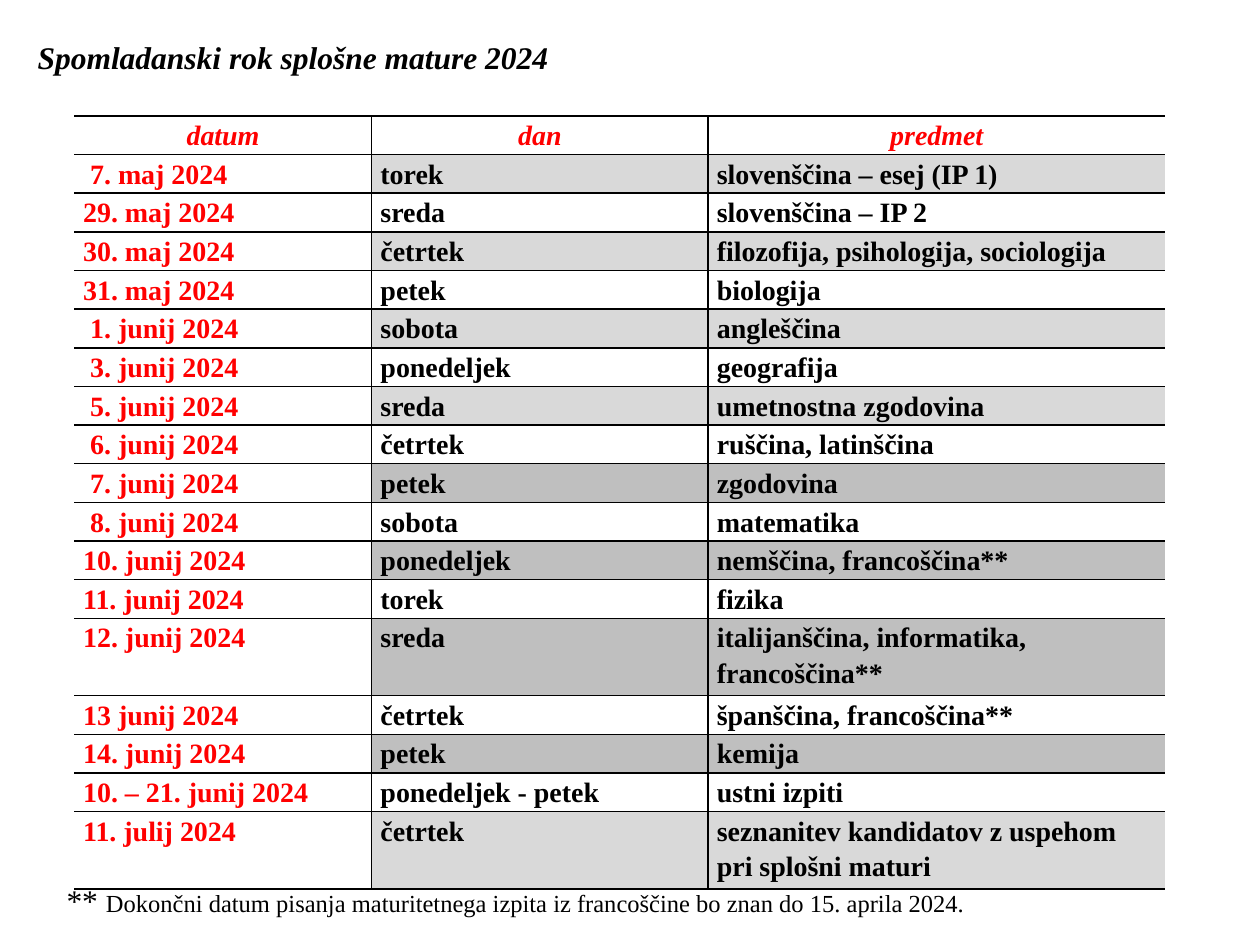
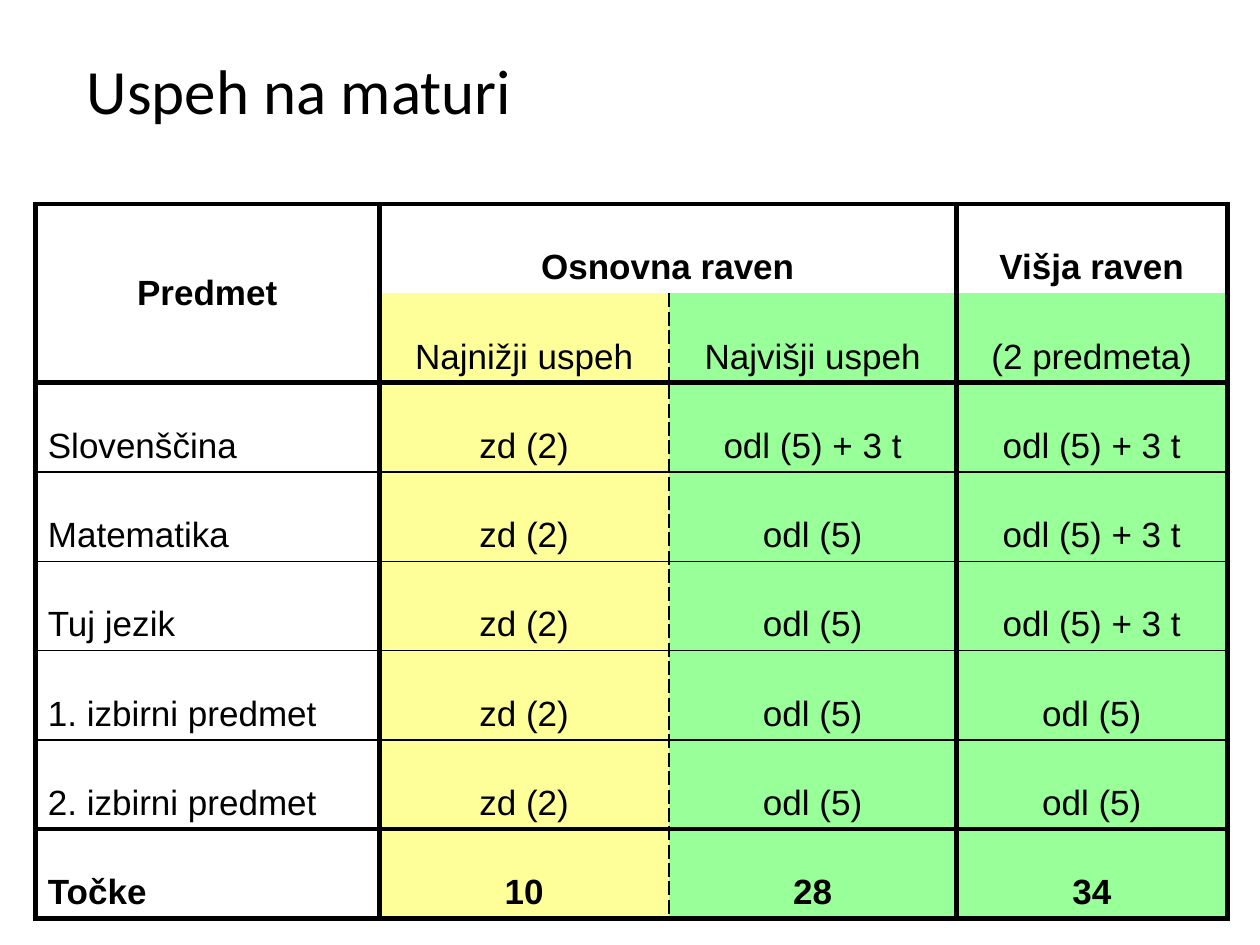
from lxml import etree
from pptx import Presentation
from pptx import util as u
from pptx.dml.color import RGBColor
from pptx.enum import text
from pptx.oxml import ns

BLACK, RED = "000000", "FF0000"
LIGHT_GREY, MID_GREY = "D9D9D9", "BFBFBF"
YELLOW, GREEN = "FFFF99", "99FF99"
SERIF, SANS, HEADING = "Times New Roman", "Arial", "Calibri"
CENTER, LEFT = text.PP_ALIGN.CENTER, text.PP_ALIGN.LEFT
NO_LINE, THIN, THICK, DASHED = (0, None), (1, "solid"), (3, "solid"), (1, "sysDash")

EXAM_HEADER = ("datum", "dan", "predmet")
EXAMS = [
    (" 7. maj 2024", "torek", "slovenščina – esej (IP 1)"),
    ("29. maj 2024", "sreda", "slovenščina – IP 2"),
    ("30. maj 2024", "četrtek", "filozofija, psihologija, sociologija"),
    ("31. maj 2024", "petek", "biologija"),
    (" 1. junij 2024", "sobota", "angleščina"),
    (" 3. junij 2024", "ponedeljek", "geografija"),
    (" 5. junij 2024", "sreda", "umetnostna zgodovina"),
    (" 6. junij 2024", "četrtek", "ruščina, latinščina"),
    (" 7. junij 2024", "petek", "zgodovina"),
    (" 8. junij 2024", "sobota", "matematika"),
    ("10. junij 2024", "ponedeljek", "nemščina, francoščina**"),
    ("11. junij 2024", "torek", "fizika"),
    ("12. junij 2024", "sreda", "italijanščina, informatika, francoščina**"),
    ("13 junij 2024", "četrtek", "španščina, francoščina**"),
    ("14. junij 2024", "petek", "kemija"),
    ("10. – 21. junij 2024", "ponedeljek - petek", "ustni izpiti"),
    ("11. julij 2024", "četrtek", "seznanitev kandidatov z uspehom pri splošni maturi"),
]
TWO_LINE_ROWS = (13, 17)
MID_GREY_ROWS = range(9, 16)

GRADES = [
    ("Predmet", "Osnovna raven", "", "Višja raven"),
    ("", "Najnižji uspeh", "Najvišji uspeh", "(2 predmeta)"),
    ("Slovenščina", "zd (2)", "odl (5) + 3 t", "odl (5) + 3 t"),
    ("Matematika", "zd (2)", "odl (5)", "odl (5) + 3 t"),
    ("Tuj jezik", "zd (2)", "odl (5)", "odl (5) + 3 t"),
    ("1. izbirni predmet", "zd (2)", "odl (5)", "odl (5)"),
    ("2. izbirni predmet", "zd (2)", "odl (5)", "odl (5)"),
    ("Točke", "10", "28", "34"),
]


def rgb(hex_color):
    return RGBColor.from_string(hex_color)


def set_all(target, values):
    for name, value in values.items():
        setattr(target, name, value)


class Deck:
    """Holds the presentation, its current slide and the shared styling."""

    def __init__(self):
        self.prs = Presentation()
        set_all(self.prs, dict(slide_width=u.Inches(10), slide_height=u.Inches(7.5)))
        self.slide = None

    def new_slide(self):
        self.slide = self.prs.slides.add_slide(self.prs.slide_layouts[6])

    def run(self, paragraph, wording, size, font, color=BLACK, bold=False, italic=False):
        run = paragraph.add_run()
        run.text = wording
        set_all(run.font, dict(size=u.Pt(size), name=font, bold=bold, italic=italic))
        run.font.color.rgb = rgb(color)

    def textbox(self, place, runs, wrap=False, **paragraph_format):
        """Each run is a dict of arguments for run()."""
        frame = self.slide.shapes.add_textbox(*map(u.Inches, place)).text_frame
        set_all(frame, dict(word_wrap=wrap, auto_size=text.MSO_AUTO_SIZE.SHAPE_TO_FIT_TEXT))
        paragraph = frame.paragraphs[0]
        set_all(paragraph, paragraph_format)
        for values in runs:
            self.run(paragraph, **values)

    def table(self, left, top, widths, heights):
        place = map(u.Inches, (left, top, sum(widths), sum(heights)))
        table = self.slide.shapes.add_table(len(heights), len(widths), *place).table
        set_all(table, dict(first_row=False, horz_banding=False))
        for column, width in zip(table.columns, widths):
            column.width = u.Inches(width)
        for row, height in zip(table.rows, heights):
            row.height = u.Inches(height)
        return table

    def cell(self, cell, fill, cell_format, paragraph_format, hanging=0, **run):
        set_all(cell, cell_format)
        if fill:
            cell.fill.solid()
            cell.fill.fore_color.rgb = rgb(fill)
        else:
            cell.fill.background()
        paragraph = cell.text_frame.paragraphs[0]
        set_all(paragraph, paragraph_format)
        if hanging:
            properties = paragraph._p.get_or_add_pPr()
            properties.set("marL", str(u.Inches(hanging)))
            properties.set("indent", str(-u.Inches(hanging)))
        self.run(paragraph, **run)

    def borders(self, table, verticals, horizontals):
        """Rule the table from one line style per column edge and per row edge."""
        for r, row in enumerate(table.rows):
            for c, cell in enumerate(row.cells):
                if cell.is_spanned:
                    continue
                right = c + (cell.span_width if cell.is_merge_origin else 1)
                bottom = r + (cell.span_height if cell.is_merge_origin else 1)
                sides = dict(L=verticals[c], R=verticals[right],
                             T=horizontals[r], B=horizontals[bottom])
                properties = cell._tc.get_or_add_tcPr()
                for side, (width, dash) in sides.items():
                    line = etree.SubElement(properties, ns.qn("a:ln" + side), w=str(u.Pt(width)))
                    if not width:
                        etree.SubElement(line, ns.qn("a:noFill"))
                        continue
                    solid = etree.SubElement(line, ns.qn("a:solidFill"))
                    etree.SubElement(solid, ns.qn("a:srgbClr"), val=BLACK)
                    etree.SubElement(line, ns.qn("a:prstDash"), val=dash)


def exam_schedule(deck):
    deck.new_slide()
    deck.textbox((0.2, 0.21, 4.3, 0.45),
                 [dict(wording="Spomladanski rok splošne mature 2024", size=18, font=SERIF,
                       bold=True, italic=True)],
                 line_spacing=1.15, space_after=u.Pt(10))
    deck.textbox((0.43, 6.9, 9.13, 0.45),
                 [dict(wording="** ", size=18, font=SERIF),
                  dict(wording="Dokončni datum pisanja maturitetnega izpita iz francoščine "
                               "bo znan do 15. aprila 2024.", size=14, font=SERIF)],
                 wrap=True, line_spacing=1.15, space_after=u.Pt(10))

    rows = [EXAM_HEADER, *EXAMS]
    line_height = 6.14 / (len(rows) + len(TWO_LINE_ROWS))
    heights = [line_height * (2 if r in TWO_LINE_ROWS else 1) for r in range(len(rows))]
    schedule = deck.table(0.59, 0.92, (2.36, 2.67, 3.63), heights)
    deck.borders(schedule, [NO_LINE, THIN, THIN, NO_LINE], [THIN] * (len(rows) + 1))
    margins = dict(margin_left=u.Inches(0.07), margin_right=u.Inches(0.07),
                   margin_top=0, margin_bottom=0)
    for r, exam in enumerate(rows):
        header = r == 0
        shade = MID_GREY if r in MID_GREY_ROWS else LIGHT_GREY
        for c, wording in enumerate(exam):
            deck.cell(schedule.cell(r, c), shade if r % 2 and c else None, margins,
                      dict(alignment=CENTER if header else LEFT, line_spacing=1.15),
                      wording=wording, size=16, font=SERIF, bold=True, italic=header,
                      color=RED if header or c == 0 else BLACK)


def grade_points(deck):
    deck.new_slide()
    deck.textbox((0.59, 0.36, 3.6, 0.71),
                 [dict(wording="Uspeh na maturi", size=36, font=HEADING)])

    last = len(GRADES) - 1
    grades = deck.table(0.28, 1.62, (2.73, 2.3, 2.28, 2.15), [5.67 / len(GRADES)] * len(GRADES))
    grades.cell(0, 0).merge(grades.cell(1, 0))
    grades.cell(0, 1).merge(grades.cell(0, 2))
    deck.borders(grades, [THICK, THICK, DASHED, THICK, THICK],
                 [THICK, NO_LINE, THICK, *[THIN] * 4, THICK, THICK])
    column_fills = (None, YELLOW, GREEN, GREEN)
    for r, grade in enumerate(GRADES):
        for c, wording in enumerate(grade):
            if not wording:
                continue
            anchor = text.MSO_ANCHOR.MIDDLE if r == c == 0 else text.MSO_ANCHOR.BOTTOM
            deck.cell(grades.cell(r, c), column_fills[c] if r else None,
                      dict(vertical_anchor=anchor),
                      dict(alignment=CENTER if c or r == 0 else LEFT), hanging=0.38,
                      wording=wording, size=20, font=SANS, bold=r in (0, last))


def main():
    deck = Deck()
    exam_schedule(deck)
    grade_points(deck)
    deck.prs.save("out.pptx")


if __name__ == "__main__":
    main()
